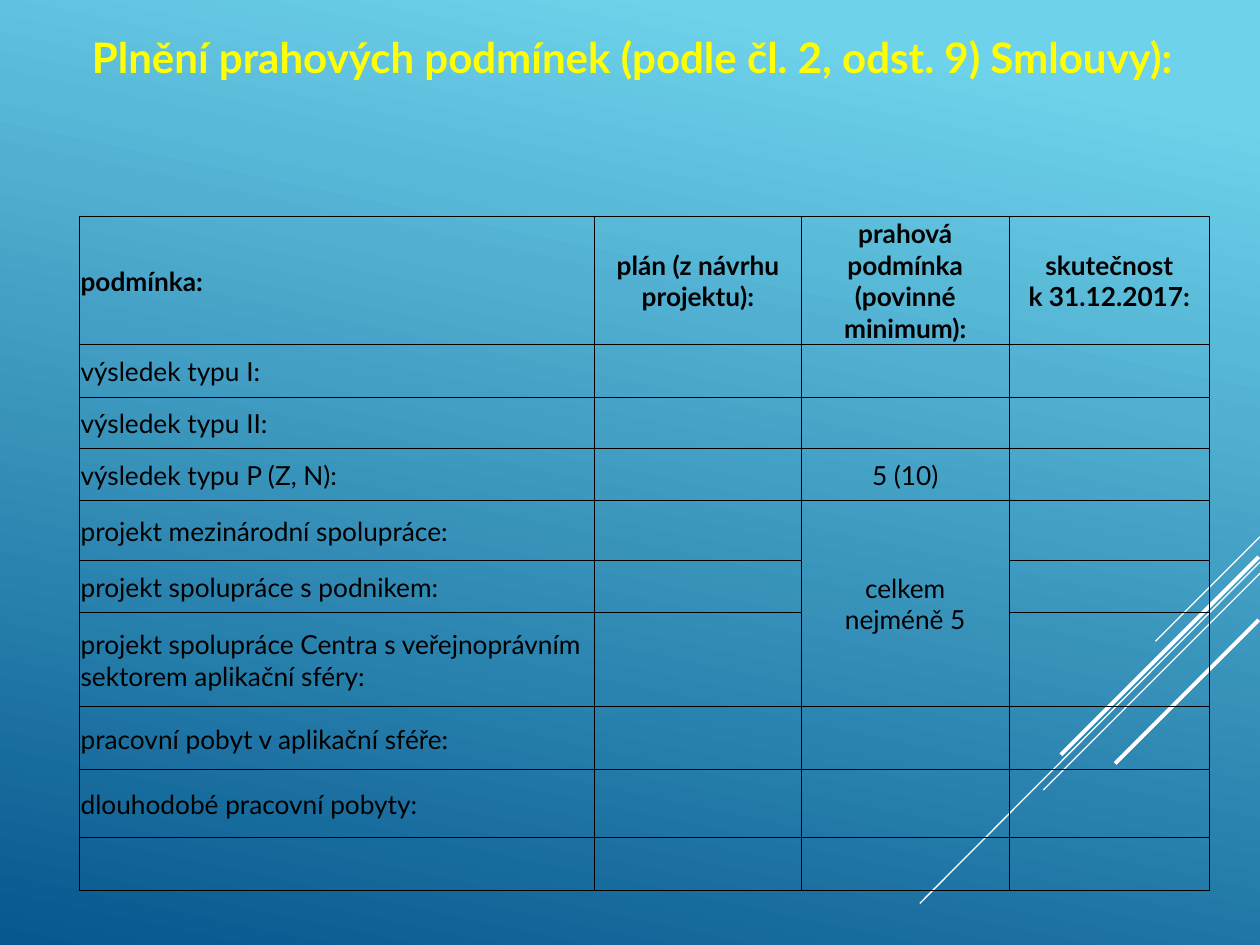
from lxml import etree
from pptx import Presentation
from pptx import util as u
from pptx.dml.color import RGBColor
from pptx.enum import shapes, text
from pptx.oxml import ns

# Content
TITLE = "Plnění prahových podmínek (podle čl. 2, odst. 9) Smlouvy):"
HEADERS = ["podmínka:", "plán (z návrhu projektu):",
           "prahová podmínka (povinné minimum):", "skutečnost\nk 31.12.2017:"]
CONDITIONS = [  # condition, required minimum, row height
    ("výsledek typu I:", "", 0.42),
    ("výsledek typu II:", "", 0.41),
    ("výsledek typu P (Z, N):", "5 (10)", 0.41),
    ("projekt mezinárodní spolupráce:", "celkem\nnejméně 5", 0.48),
    ("projekt spolupráce s podnikem:", "", 0.41),
    ("projekt spolupráce Centra s veřejnoprávním sektorem aplikační sféry:", "", 0.75),
    ("pracovní pobyt v aplikační sféře:", "", 0.5),
    ("dlouhodobé pracovní pobyty:", "", 0.54),
    ("", "", 0.42),
]
HEADER_HEIGHT = 1.01
COLUMN_WIDTHS = [4.09, 1.64, 1.65, 1.59]
MERGED_ROWS, MINIMUM_COLUMN = (4, 6), 2
STREAKS = [  # start x, start y, end x, end y, weight
    (10, 4.26, 9.17, 5.09, 0.75),
    (10, 4.46, 7.3, 7.17, 0.75),
    (10, 4.55, 8.28, 6.27, 0.75),
    (9.99, 4.42, 8.42, 5.99, 2.25),
    (9.99, 4.92, 8.85, 6.06, 2.25),
]

FONT = "Lato"
BLACK = RGBColor(0x00, 0x00, 0x00)
WHITE = RGBColor(0xFF, 0xFF, 0xFF)
YELLOW = RGBColor(0xFF, 0xFF, 0x00)
SKY = RGBColor(0x6E, 0xD2, 0xEB)
DEEP_BLUE = RGBColor(0x06, 0x58, 0x8E)


def write(frame, words, size=15, color=BLACK, bold=False,
          align=text.PP_ALIGN.LEFT, spacing=None, gap=0):
    """Fill a text frame, one paragraph for each line of words."""
    for index, line in enumerate(words.split("\n")):
        para = frame.paragraphs[0] if index == 0 else frame.add_paragraph()
        para.alignment = align
        para.space_before = para.space_after = u.Pt(gap)
        if spacing:
            para.line_spacing = spacing
        para.font.size = u.Pt(size)
        if line:
            span = para.add_run()
            span.text = line
            span.font.name, span.font.size = FONT, u.Pt(size)
            span.font.bold, span.font.color.rgb = bold, color


def set_border(cell, side, weight):
    line = etree.SubElement(cell._tc.get_or_add_tcPr(), ns.qn("a:ln" + side),
                            w=str(u.Pt(weight)))
    fill = etree.SubElement(line, ns.qn("a:solidFill"))
    etree.SubElement(fill, ns.qn("a:srgbClr"), val=str(BLACK))


deck = Presentation()
deck.slide_width, deck.slide_height = u.Inches(10), u.Inches(7.5)
page = deck.slides.add_slide(deck.slide_layouts[5])

# Background
backdrop = page.background.fill
backdrop.gradient()
backdrop.gradient_angle = 258
for stop, color, position in zip(backdrop.gradient_stops, (SKY, DEEP_BLUE), (0.1, 1)):
    stop.color.rgb, stop.position = color, position

# Diagonal streaks
for *ends, weight in STREAKS:
    streak = page.shapes.add_connector(shapes.MSO_CONNECTOR.STRAIGHT, *map(u.Inches, ends))
    streak.line.color.rgb, streak.line.width = WHITE, u.Pt(weight)
    etree.SubElement(streak._element.spPr, ns.qn("a:effectLst"))

# Title
title = page.shapes.title
title.left, title.top, title.width, title.height = map(u.Inches, (0.63, 0.16, 9.04, 0.99))
title.text_frame.word_wrap = True
title.text_frame.auto_size = text.MSO_AUTO_SIZE.NONE
title.text_frame.vertical_anchor = text.MSO_ANCHOR.TOP
write(title.text_frame, TITLE, size=24, color=YELLOW, bold=True, spacing=1.1, gap=3)

# Table
rows = [HEADERS] + [[condition, "", minimum, ""] for condition, minimum, _ in CONDITIONS]
heights = [HEADER_HEIGHT] + [height for *_, height in CONDITIONS]
frame = page.shapes.add_table(len(rows), len(HEADERS), u.Inches(0.63), u.Inches(1.72),
                              u.Inches(sum(COLUMN_WIDTHS)), u.Inches(sum(heights)))
table = frame.table
table.first_row = table.horz_banding = False
for column, width in zip(table.columns, COLUMN_WIDTHS):
    column.width = u.Inches(width)
for row, height in zip(table.rows, heights):
    row.height = u.Inches(height)

last_row, last_column = len(rows) - 1, len(HEADERS) - 1
for r, row in enumerate(rows):
    for c, words in enumerate(row):
        cell = table.cell(r, c)
        cell.margin_left = cell.margin_right = cell.margin_top = u.Inches(0.01)
        cell.margin_bottom = 0
        cell.vertical_anchor = text.MSO_ANCHOR.MIDDLE
        outer = {"L": c == 0, "R": c == last_column, "T": r == 0, "B": r == last_row}
        for side, is_outer in outer.items():
            set_border(cell, side, 1 if is_outer else 0.5)
        cell.fill.background()
        write(cell.text_frame, words, bold=r == 0,
              align=text.PP_ALIGN.CENTER if c else text.PP_ALIGN.LEFT)

first, last = MERGED_ROWS
table.cell(first, MINIMUM_COLUMN).merge(table.cell(last, MINIMUM_COLUMN))

deck.save("out.pptx")
